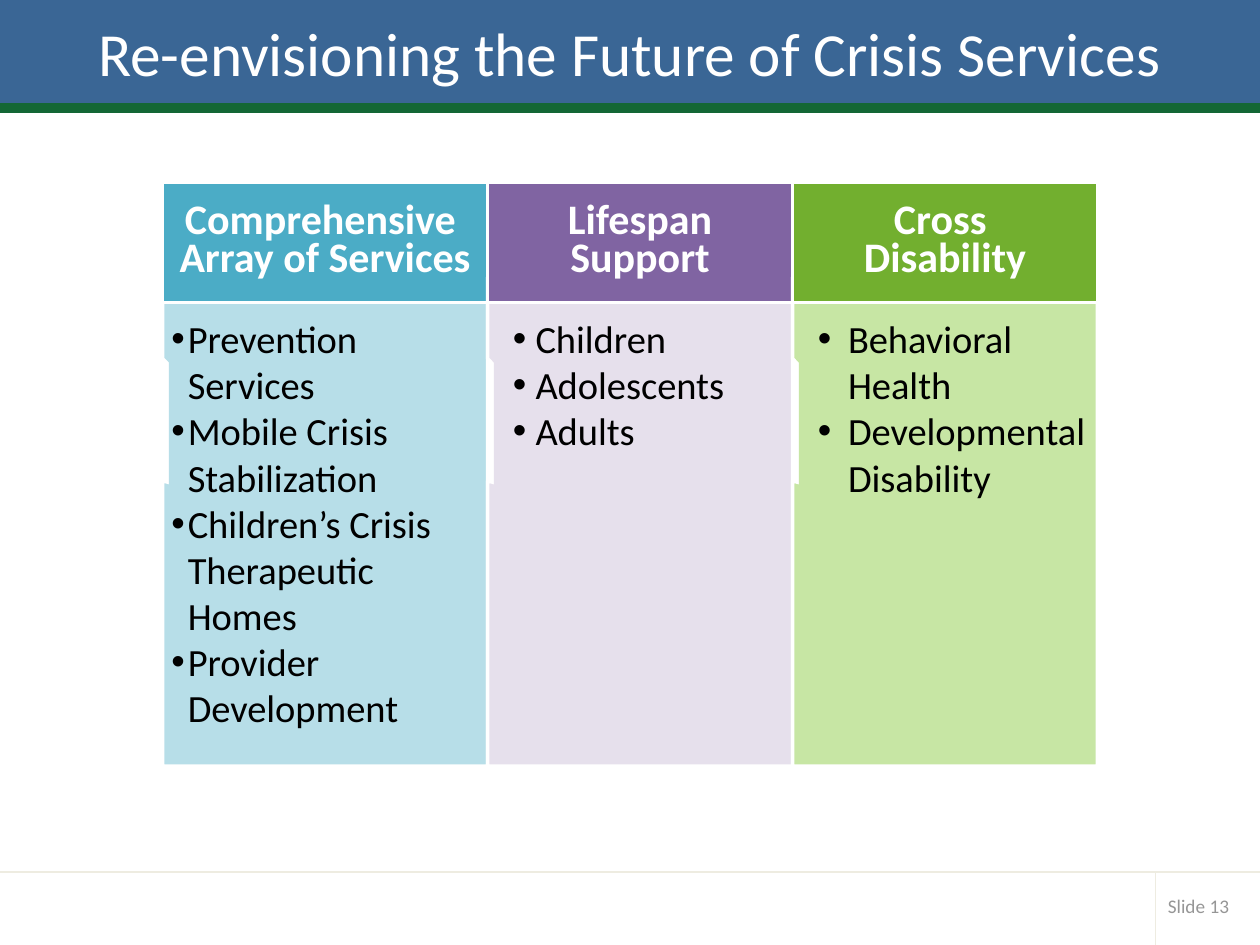
from lxml.etree import SubElement
from pptx import Presentation
from pptx.dml.color import RGBColor
from pptx.enum.shapes import MSO_CONNECTOR as CONN, MSO_SHAPE as SHAPE
from pptx.enum.text import MSO_ANCHOR as ANCHOR, PP_ALIGN as ALIGN
from pptx.oxml.ns import qn
from pptx.util import Inches, Pt

TITLE = "Re-envisioning the Future of Crisis Services"
PAGE = "Slide 13"
COLUMNS = [
    dict(name="services", width=2.58, head=["Comprehensive ", "Array of Services"],
         indent=0.13, hang=0.13,
         items=["Prevention Services", "Mobile Crisis Stabilization",
                "Children’s Crisis Therapeutic Homes", "Provider Development"]),
    dict(name="lifespan", width=2.42, head=["Lifespan", "Support"],
         indent=0.31, hang=0.18, items=["Children", "Adolescents", "Adults"]),
    dict(name="disability", width=2.42, head=["Cross ", "Disability"],
         indent=0.37, hang=0.24,
         items=["Behavioral Health", "Developmental Disability"]),
]
COLORS = dict(
    band="3A6695", stripe="136735", rule="EEECE1", page="969696",
    white="FFFFFF", black="000000",
    services="4BACC6", services_body="B7DEE8",
    lifespan="8064A2", lifespan_body="E6E0EC",
    disability="72AF2F", disability_body="C7E6A4",
)
FONT = "Calibri"
W, H = 10, 7.5
BAND_H, STRIPE_H = 0.83, 0.05
FOOT_Y, FOOT_X = 6.92, 9.17
HEAD_Y, HEAD_H = 1.45, 0.95
CALLOUT_Y, BODY_Y, BODY_H = 2.2, 2.13, 3.88
GAP, INSET, LIST_TOP = 0.05, 0.02, 0.37


def rgb(name):
    return RGBColor.from_string(COLORS[name])


def box(s, kind, x, y, w, h, fill, line=None):
    sp = s.shapes.add_shape(kind, Inches(x), Inches(y), Inches(w), Inches(h))
    sp.shadow.inherit = False
    sp.fill.solid()
    sp.fill.fore_color.rgb = rgb(fill)
    if line:
        sp.line.color.rgb = rgb(line)
        sp.line.width = Pt(2)
    else:
        sp.line.fill.background()
    return sp


def rule(s, x1, y1, x2, y2):
    c = s.shapes.add_connector(CONN.STRAIGHT, Inches(x1), Inches(y1), Inches(x2), Inches(y2))
    c.line.color.rgb = rgb("rule")
    c.line.width = Pt(1)
    SubElement(c.element.spPr, qn("a:effectLst"))


def frame(sp, anchor, inset=None):
    tf = sp.text_frame
    tf.word_wrap = True
    tf.vertical_anchor = anchor
    if inset is not None:
        tf.margin_left = tf.margin_right = tf.margin_top = tf.margin_bottom = Inches(inset)
    return tf


def add_run(p, text, size, color, bold=False):
    r = p.add_run()
    r.text = text
    r.font.name, r.font.size, r.font.bold = FONT, Pt(size), bold
    r.font.color.rgb = rgb(color)


def bullet(p, indent, hang):
    pPr = p._p.get_or_add_pPr()
    pPr.set("marL", str(Inches(indent)))
    pPr.set("indent", str(-Inches(hang)))
    SubElement(pPr, qn("a:buFont"), typeface="Arial")
    SubElement(pPr, qn("a:buChar"), char="•")


def add_column(s, col, x):
    name, w = col["name"], col["width"]
    fill = name + "_body"
    callout = box(s, SHAPE.RECTANGULAR_CALLOUT, x, CALLOUT_Y, w, BODY_H, fill, "white")
    callout.adjustments[0] = callout.adjustments[1] = 0

    body = box(s, SHAPE.RECTANGLE, x + GAP, BODY_Y, w - 2 * GAP, BODY_H, fill)
    tf = frame(body, ANCHOR.TOP, INSET)
    tf.margin_top = Inches(LIST_TOP)
    for i, item in enumerate(col["items"]):
        p = tf.add_paragraph() if i else tf.paragraphs[0]
        p.alignment = ALIGN.LEFT
        bullet(p, col["indent"], col["hang"])
        add_run(p, item, 22, "black")

    head = box(s, SHAPE.RECTANGLE, x, HEAD_Y, w, HEAD_H, name, "white")
    p = frame(head, ANCHOR.MIDDLE, INSET).paragraphs[0]
    p.alignment = ALIGN.CENTER
    p.line_spacing = Pt(22)
    for i, text in enumerate(col["head"]):
        if i:
            p.add_line_break()
        add_run(p, text, 24, "white", True)


def main():
    prs = Presentation()
    prs.slide_width, prs.slide_height = Inches(W), Inches(H)
    s = prs.slides.add_slide(prs.slide_layouts[5])

    box(s, SHAPE.RECTANGLE, 0, 0, W, BAND_H, "band", "band")
    box(s, SHAPE.RECTANGLE, 0, BAND_H, W, STRIPE_H, "stripe", "stripe")
    rule(s, 0, FOOT_Y, W, FOOT_Y)
    rule(s, FOOT_X, FOOT_Y, FOOT_X, H)

    page = s.shapes.add_textbox(Inches(FOOT_X), Inches(7.04), Inches(0.74), Inches(0.29))
    tf = frame(page, ANCHOR.MIDDLE)
    tf.word_wrap = False
    add_run(tf.paragraphs[0], PAGE, 11, "page")

    title = s.shapes.title
    title.left, title.top, title.width, title.height = 0, 0, Inches(W), Inches(BAND_H)
    p = frame(title, ANCHOR.MIDDLE).paragraphs[0]
    p.alignment = ALIGN.CENTER
    add_run(p, TITLE, 35, "white")
    s.shapes.element.append(title.element)

    x = 1.29
    for col in COLUMNS:
        add_column(s, col, x)
        x += col["width"]

    prs.save("out.pptx")


if __name__ == "__main__":
    main()
